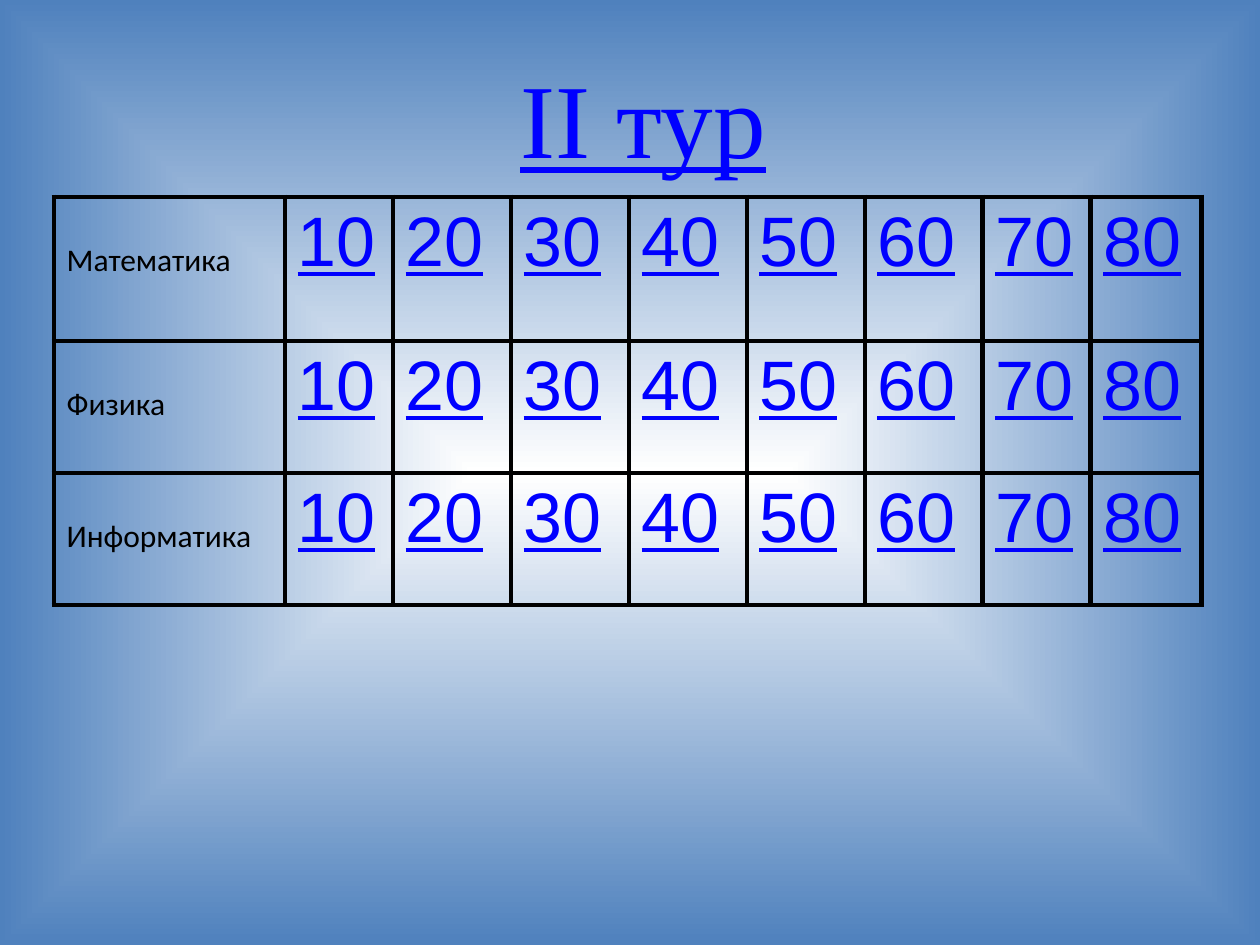
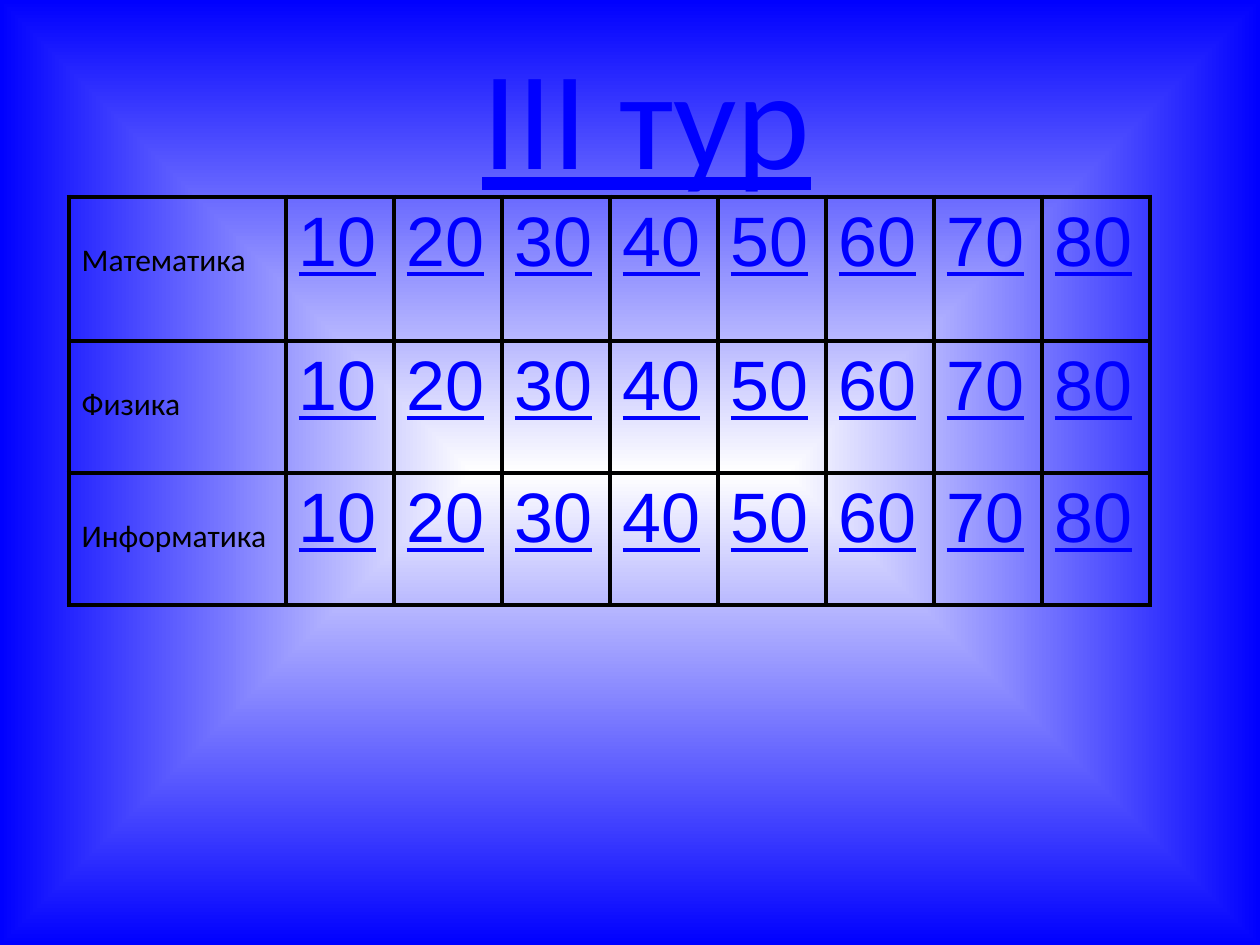
import lxml.etree
import pptx
import pptx.dml.color
import pptx.enum.text
import pptx.oxml.ns
import pptx.util

COLORS = {"link": "0000FF", "text": "000000", "border": "000000",
          "center": "FFFFFF", "steel": "4F81BD", "blue": "0000FF"}
SUBJECTS = ["Математика", "Физика", "Информатика"]
POINTS = range(10, 90, 10)
ROW_HEIGHTS = [144, 132, 132]
TABLE_TOP = 197
ROUNDS = [
    dict(title="II тур", font="Times New Roman", size=60, title_at=(63, 38),
         edge="steel", left=54, cols=[231, 108] + [118] * 5 + [108, 111]),
    dict(title="III тур", font="Calibri", size=80, title_at=(64, 35),
         edge="blue", left=69, cols=[217] + [108] * 8),
]
qn = pptx.oxml.ns.qn


def px(n):
    return pptx.util.Emu(round(n * 914400 / 126))


def add_run(p, text, font, size, color, underline=False):
    r = p.add_run()
    r.text = text
    r.font.name = font
    r.font.size = pptx.util.Pt(size)
    r.font.underline = underline
    r.font.color.rgb = pptx.dml.color.RGBColor.from_string(COLORS[color])


prs = pptx.Presentation()
prs.slide_width, prs.slide_height = px(1260), px(945)

for rnd in ROUNDS:
    s = prs.slides.add_slide(prs.slide_layouts[5])

    # Background: gradient from the centre to the edges
    fill = s.background.fill
    fill.gradient()
    for stop, position, color in zip(fill.gradient_stops, (0, 1), ("center", rnd["edge"])):
        stop.position = position
        stop.color.rgb = pptx.dml.color.RGBColor.from_string(COLORS[color])
    grad = s.element.find(".//" + qn("a:gradFill"))
    grad.remove(grad.find(qn("a:lin")))
    shade = lxml.etree.SubElement(grad, qn("a:path"), path="shape")
    lxml.etree.SubElement(shade, qn("a:fillToRect"), l="50000", t="50000", r="50000", b="50000")

    # Title
    sp = s.shapes.title
    sp.left, sp.top = (px(n) for n in rnd["title_at"])
    sp.width, sp.height = px(1134), px(157)
    tf = sp.text_frame
    tf.auto_size = pptx.enum.text.MSO_AUTO_SIZE.NONE
    tf.vertical_anchor = pptx.enum.text.MSO_ANCHOR.MIDDLE
    p = tf.paragraphs[0]
    p.alignment = pptx.enum.text.PP_ALIGN.CENTER
    add_run(p, " ", rnd["font"], rnd["size"], "link")
    add_run(p, rnd["title"], rnd["font"], rnd["size"], "link", True)

    # Table of subjects and points
    table = s.shapes.add_table(len(SUBJECTS), len(rnd["cols"]), px(rnd["left"]), px(TABLE_TOP),
                               px(sum(rnd["cols"])), px(sum(ROW_HEIGHTS))).table
    table.first_row = table.horz_banding = False
    for column, width in zip(table.columns, rnd["cols"]):
        column.width = px(width)
    for i, subject in enumerate(SUBJECTS):
        table.rows[i].height = px(ROW_HEIGHTS[i])
        for j, text in enumerate([subject, *POINTS]):
            cell = table.cell(i, j)
            p = cell.text_frame.paragraphs[0]
            if j == 0:
                cell.margin_top = px(45)
                add_run(p, text, "Calibri", 18, "text")
            else:
                add_run(p, str(text), "Arial", 40, "link", True)

            # Black 3 pt borders, no fill
            tc_pr = cell._tc.get_or_add_tcPr()
            for side in ("lnL", "lnR", "lnT", "lnB"):
                ln = lxml.etree.SubElement(tc_pr, qn("a:" + side), w=str(pptx.util.Pt(3)))
                solid = lxml.etree.SubElement(ln, qn("a:solidFill"))
                lxml.etree.SubElement(solid, qn("a:srgbClr"), val=COLORS["border"])
            cell.fill.background()

prs.save("out.pptx")
